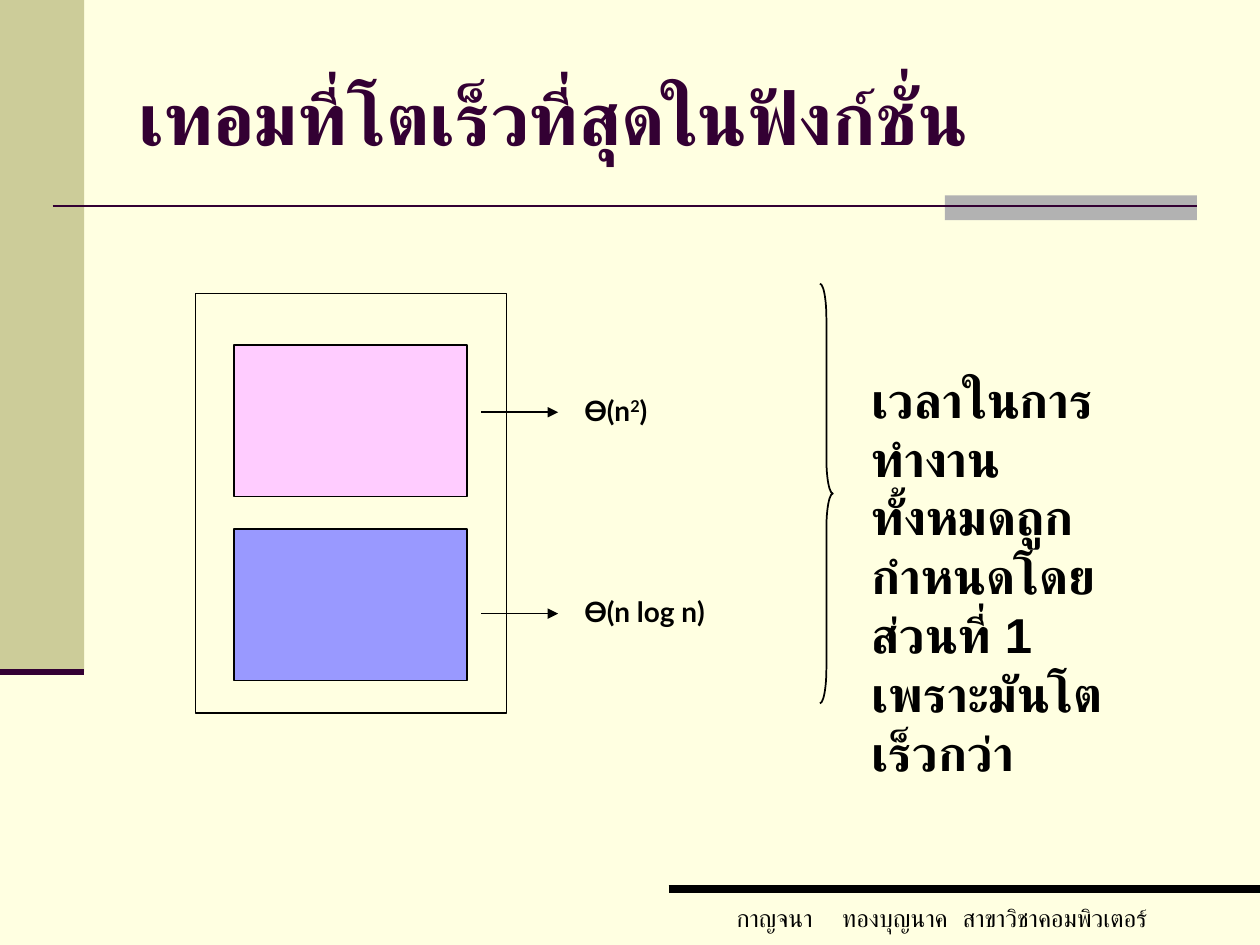
from lxml import etree
from pptx import Presentation
from pptx.dml import color
from pptx.enum import shapes, text
from pptx.oxml import ns
from pptx.util import Cm, Pt

INK = "000000"
PLUM = "330033"


def rgb(value):
    return color.RGBColor.from_string(value)


class Page:
    """The current slide and the style its elements share."""

    def __init__(self, slide, background):
        self.slide = slide
        slide.background.fill.solid()
        slide.background.fill.fore_color.rgb = rgb(background)

    def shape(self, kind, left, top, width, height, fill=None, line=None):
        item = self.slide.shapes.add_shape(
            kind, Cm(left), Cm(top), Cm(width), Cm(height))
        item.shadow.inherit = False
        if fill:
            item.fill.solid()
            item.fill.fore_color.rgb = rgb(fill)
        else:
            item.fill.background()
        if line:
            item.line.color.rgb = rgb(line)
            item.line.width = Pt(1)
        else:
            item.line.fill.background()
        return item

    def box(self, *place, fill=None, line=None):
        return self.shape(shapes.MSO_SHAPE.RECTANGLE, *place, fill, line)

    def rule(self, left, right, y, width, ink=INK, arrow=False):
        """Draw a horizontal line, with an arrowhead at the right if asked."""
        line = self.slide.shapes.add_connector(
            shapes.MSO_CONNECTOR.STRAIGHT, Cm(left), Cm(y), Cm(right), Cm(y))
        line.line.color.rgb = rgb(ink)
        line.line.width = Pt(width)
        if arrow:
            outline = line.line._get_or_add_ln()
            etree.SubElement(outline, ns.qn("a:tailEnd"), type="triangle")
        etree.SubElement(line._element.spPr, ns.qn("a:effectLst"))

    def text(self, left, top, width, height, spans, font, size, ink=INK,
             bold=True, wrap=True, anchor=text.MSO_ANCHOR.TOP):
        """Add one paragraph; every second span is superscript."""
        box = self.slide.shapes.add_textbox(
            Cm(left), Cm(top), Cm(width), Cm(height))
        frame = box.text_frame
        frame.word_wrap = wrap
        frame.vertical_anchor = anchor
        para = frame.paragraphs[0]
        for index, words in enumerate(spans):
            span = para.add_run()
            span.text = words
            span.font.size = Pt(size)
            span.font.bold = bold
            span.font.color.rgb = rgb(ink)
            span.font.name = font
            properties = span.font._element
            # Thai takes its typeface from the complex-script setting
            etree.SubElement(properties, ns.qn("a:cs"), typeface=font)
            if index % 2:
                properties.set("baseline", "30000")


def main():
    deck = Presentation()
    deck.slide_width, deck.slide_height = Cm(25.4), Cm(19.05)
    page = Page(deck.slides.add_slide(deck.slide_layouts[6]), "FFFFE1")

    # Frame of the page
    page.box(0, 0, 1.7, 13.55, fill="CCCC99")
    page.box(19.05, 3.94, 5.08, 0.5, fill="B2B2B2")
    page.rule(1.06, 24.13, 4.15, 1.5, PLUM)
    page.rule(0, 1.7, 13.55, 3.5, PLUM)
    page.rule(13.48, 25.4, 17.93, 4.5)
    page.text(14.6, 18.08, 9.5, 0.85, ["กาญจนา  ทองบุญนาค สาขาวิชาคอมพิวเตอร์"],
              "DejaVu Sans Mono", 14, bold=False, wrap=False)

    page.text(2.54, 0.76, 21.59, 3.18, ["เทอมที่โตเร็วที่สุดในฟังก์ชั่น"],
              "Times New Roman", 42, PLUM, anchor=text.MSO_ANCHOR.MIDDLE)

    # Program with its two parts and their growth
    page.box(3.94, 5.92, 6.27, 8.46, line=INK)
    parts = [("FFCCFF", ["Ө(n", "2", ")"]), ("9999FF", ["Ө(n log n)"])]
    for row, (fill, growth) in enumerate(parts):
        page.box(4.72, 6.96 + 3.71 * row, 4.7, 3.05, fill=fill, line=INK)
        middle = 8.31 + 4.06 * row
        page.rule(9.7, 11.25, middle, 1, arrow=True)
        page.text(11.53, middle - 0.51, 4.7, 0.94, growth, "Lato", 16)

    # Conclusion
    brace = page.shape(shapes.MSO_SHAPE.RIGHT_BRACE, 16.53, 5.72, 0.26, 8.46,
                       line=INK)
    brace.adjustments[0] = 2.71
    page.text(17.32, 7.32, 6.02, 5.05,
              ["เวลาในการทำงานทั้งหมดถูกกำหนดโดยส่วนที่ 1 เพราะมันโตเร็วกว่า"],
              "Arial", 28)

    deck.save("out.pptx")


if __name__ == "__main__":
    main()
